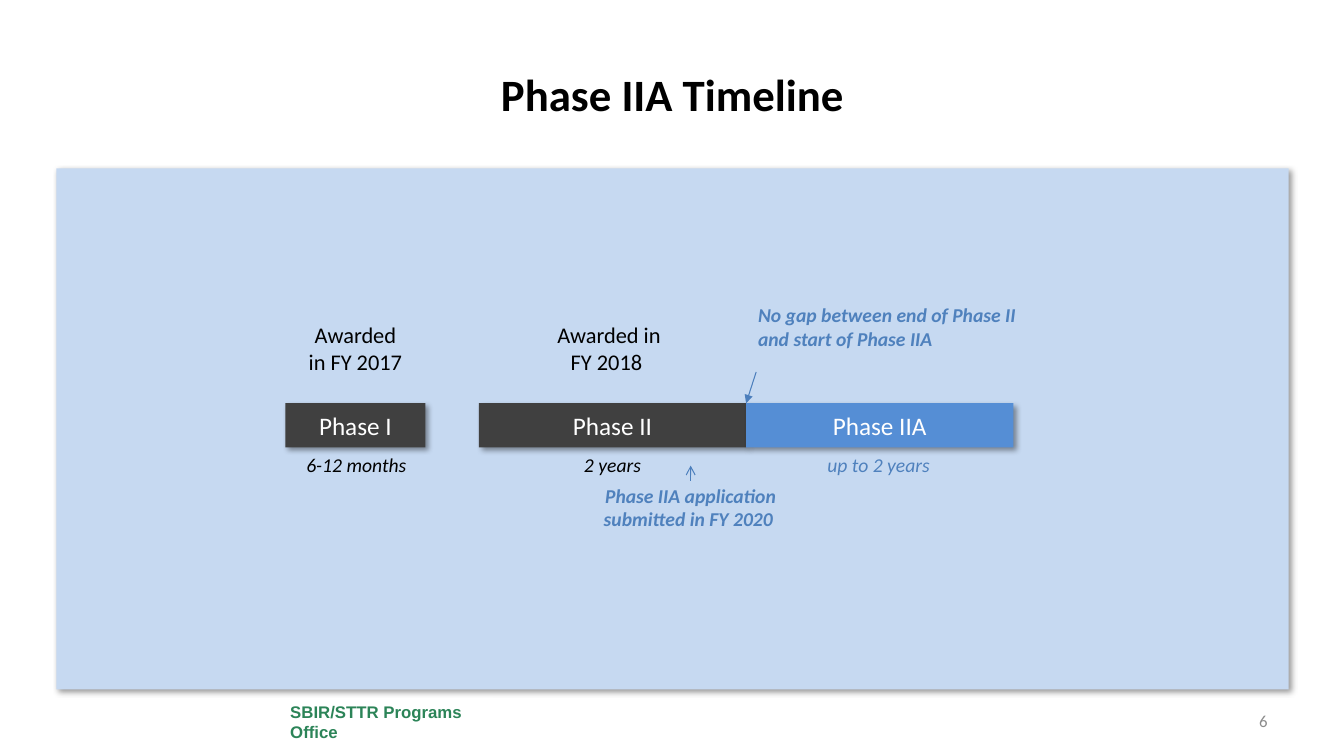
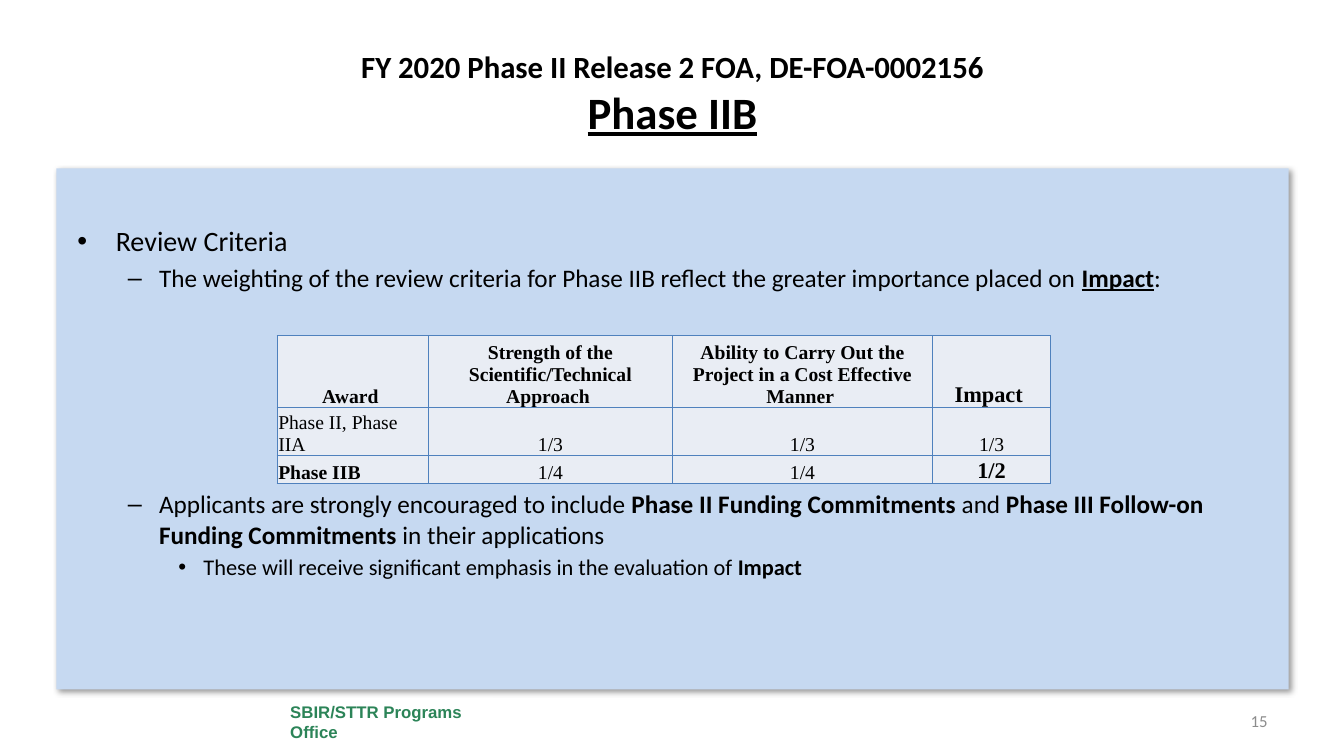
from dataclasses import dataclass
from typing import Optional, Sequence

from lxml import etree
from pptx import Presentation
from pptx.dml.color import RGBColor
from pptx.enum import shapes, text
from pptx.oxml import ns
from pptx.util import Inches, Pt

BLACK = RGBColor(0x00, 0x00, 0x00)
WHITE = RGBColor(0xFF, 0xFF, 0xFF)
PANEL = RGBColor(0xC6, 0xD9, 0xF1)
GREEN = RGBColor(0x2C, 0x84, 0x58)
GRAY = RGBColor(0x8C, 0x8C, 0x8C)
CHARCOAL = RGBColor(0x40, 0x40, 0x40)
BAR_BLUE = RGBColor(0x55, 0x8E, 0xD5)
ACCENT = RGBColor(0x4F, 0x81, 0xBD)
ARROW = RGBColor(0x4B, 0x7E, 0xBC)
CELL = RGBColor(0xE9, 0xED, 0xF4)

LEFT, CENTER, RIGHT = text.PP_ALIGN.LEFT, text.PP_ALIGN.CENTER, text.PP_ALIGN.RIGHT
TOP, MIDDLE, BOTTOM = text.MSO_ANCHOR.TOP, text.MSO_ANCHOR.MIDDLE, text.MSO_ANCHOR.BOTTOM

BAR_TOP, BAR_HEIGHT = 4.0, 0.44


@dataclass(frozen=True)
class Box:
    left: float
    top: float
    width: float
    height: float

    def lengths(self):
        return [Inches(v) for v in (self.left, self.top, self.width, self.height)]


@dataclass(frozen=True)
class Style:
    size: float
    color: RGBColor = BLACK
    bold: bool = False
    italic: bool = False
    align: text.PP_ALIGN = CENTER
    name: str = "Calibri"


@dataclass(frozen=True)
class Run:
    """A piece of text; unset attributes follow its paragraph."""
    words: str
    size: Optional[float] = None
    bold: Optional[bool] = None
    underline: Optional[bool] = None
    starts_line: bool = False


@dataclass(frozen=True)
class Bullet:
    symbol: str
    level: int
    margin: float
    hanging: float
    size: float
    space_before: float
    runs: Sequence[Run]


@dataclass(frozen=True)
class Label:
    words: str
    box: Box
    style: Style


@dataclass(frozen=True)
class Phase:
    name: str
    left: float
    width: float
    fill: RGBColor


@dataclass(frozen=True)
class Arrow:
    start: tuple
    end: tuple
    head: str


TITLE = Style(32, bold=True)
FOOTER = Style(12, GREEN, bold=True, align=LEFT, name="Arial")
NUMBER = Style(12, GRAY, align=RIGHT)
PHASE = Style(18, WHITE)
DURATION = Style(14, italic=True)
DURATION_BLUE = Style(14, ACCENT, italic=True)
AWARDED = Style(16)
NOTE = Style(14, ACCENT, bold=True, italic=True)
NOTE_LEFT = Style(14, ACCENT, bold=True, italic=True, align=LEFT)

PHASES = (
    Phase("Phase I", 2.83, 1.39, CHARCOAL),
    Phase("Phase II", 4.75, 2.65, CHARCOAL),
    Phase("Phase IIA", 7.4, 2.65, BAR_BLUE),
)
LABELS = (
    Label("6-12 months", Box(2.88, 4.44, 1.31, 0.34), DURATION),
    Label("2 years", Box(5.42, 4.44, 1.31, 0.34), DURATION),
    Label("up to 2 years", Box(8.06, 4.44, 1.31, 0.34), DURATION_BLUE),
    Label("Phase IIA application submitted in FY 2020 ", Box(5.74, 4.75, 2.22, 0.57), NOTE),
    Label("Awarded in FY 2017", Box(2.94, 3.14, 1.17, 0.64), AWARDED),
    Label("Awarded in FY 2018 ", Box(5.33, 3.14, 1.42, 0.64), AWARDED),
    Label("No gap between end of Phase II and start of Phase IIA",
          Box(7.42, 2.96, 2.92, 0.57), NOTE_LEFT),
)
ARROWS = (
    Arrow((6.85, 4.77), (6.85, 4.62), "arrow"),
    Arrow((7.5, 3.69), (7.4, BAR_TOP), "triangle"),
)

# The large gap before the third bullet leaves room for the table.
BULLETS = (
    Bullet("•", 0, 0.38, 0.38, 20, 0, [Run("Review Criteria")]),
    Bullet("–", 1, 0.81, 0.31, 18, 3.6, [
        Run("The weighting of the review criteria for Phase IIB reflect the greater "
            "importance placed on "),
        Run("Impact", bold=True, underline=True),
        Run(":")]),
    Bullet("–", 1, 0.81, 0.31, 18, 140, [
        Run("Applicants are strongly encouraged to include "),
        Run("Phase II Funding Commitments ", bold=True),
        Run("and "),
        Run("Phase III Follow-on Funding Commitments ", bold=True),
        Run("in their applications")]),
    Bullet("•", 2, 1.25, 0.25, 16, 3.2, [
        Run("These will receive significant emphasis in the evaluation of "),
        Run("Impact", bold=True)]),
)

CRITERIA = (
    ("Award ", "Strength of the Scientific/Technical Approach ",
     "Ability to Carry Out the Project in a Cost Effective Manner ", "Impact "),
    ("Phase II, Phase IIA", "1/3", "1/3", "1/3"),
    ("Phase IIB", "1/4", "1/4", "1/2"),
)
COLUMN_WIDTHS = (1.5, 2.42, 2.58, 1.17)
ROW_HEIGHTS = (0.65, 0.44, 0.26)
BOLD_CELLS = {(2, 0), (2, 3)}
LARGE_CELLS = {(0, 3), (2, 3)}


def add_element(parent, tag: str, **attributes: str):
    element = etree.SubElement(parent, ns.qn(tag))
    for name, value in attributes.items():
        element.set(name, value)
    return element


def write(paragraph, runs: Sequence[Run], style: Style) -> None:
    paragraph.alignment = style.align
    font = paragraph.font
    font.name, font.size = style.name, Pt(style.size)
    font.bold, font.italic = style.bold, style.italic
    font.color.rgb = style.color
    for part in runs:
        if part.starts_line:
            paragraph.add_line_break()
        run = paragraph.add_run()
        run.text = part.words
        if part.size:
            run.font.size = Pt(part.size)
        if part.bold is not None:
            run.font.bold = part.bold
        if part.underline is not None:
            run.font.underline = part.underline


def add_text(slide, box: Box, runs: Sequence[Run], style: Style, anchor=TOP):
    shape = slide.shapes.add_textbox(*box.lengths())
    frame = shape.text_frame
    frame.word_wrap = True
    frame.vertical_anchor = anchor
    write(frame.paragraphs[0], runs, style)
    return shape


def add_shadowed_rectangle(slide, box: Box, fill: RGBColor):
    shape = slide.shapes.add_shape(shapes.MSO_SHAPE.RECTANGLE, *box.lengths())
    shape.fill.solid()
    shape.fill.fore_color.rgb = fill
    shape.line.fill.background()
    shape.shadow.inherit = False
    effects = shape._element.spPr.find(ns.qn("a:effectLst"))
    shadow = add_element(effects, "a:outerShdw", blurRad=str(Pt(4)), dist=str(Pt(3)),
                         dir="2700000", algn="tl", rotWithShape="0")
    color = add_element(shadow, "a:srgbClr", val=str(BLACK))
    add_element(color, "a:alpha", val="40000")
    return shape


def add_base_slide(presentation, title: Sequence[Run], number: int):
    """Add a slide with the shared panel, footer, title and slide number."""
    slide = presentation.slides.add_slide(presentation.slide_layouts[6])
    add_shadowed_rectangle(slide, Box(0.56, 1.67, 12.22, 5.17), PANEL)
    footer = add_text(slide, Box(2.78, 6.92, 2.11, 0.48),
                      [Run("SBIR/STTR Programs Office")], FOOTER, MIDDLE)
    footer.fill.solid()
    footer.fill.fore_color.rgb = WHITE
    add_text(slide, Box(0.67, 0.3, 12, 1.25), title, TITLE, MIDDLE)
    add_text(slide, Box(10.56, 6.95, 2.11, 0.4), [Run(str(number))], NUMBER, MIDDLE)
    return slide


def add_phase(slide, phase: Phase) -> None:
    bar = add_shadowed_rectangle(
        slide, Box(phase.left, BAR_TOP, phase.width, BAR_HEIGHT), phase.fill)
    bar.text_frame.vertical_anchor = MIDDLE
    write(bar.text_frame.paragraphs[0], [Run(phase.name)], PHASE)


def add_arrow(slide, arrow: Arrow) -> None:
    ends = [Inches(v) for v in (*arrow.start, *arrow.end)]
    connector = slide.shapes.add_connector(shapes.MSO_CONNECTOR.STRAIGHT, *ends)
    connector.line.color.rgb = ARROW
    connector.line.width = Pt(0.75)
    properties = connector._element.spPr
    add_element(properties.find(ns.qn("a:ln")), "a:tailEnd", type=arrow.head)
    add_element(properties, "a:effectLst")


def add_bullets(slide, box: Box, bullets: Sequence[Bullet]) -> None:
    frame = slide.shapes.add_textbox(*box.lengths()).text_frame
    frame.word_wrap = True
    for index, bullet in enumerate(bullets):
        paragraph = frame.add_paragraph() if index else frame.paragraphs[0]
        paragraph.level = bullet.level
        properties = paragraph._p.get_or_add_pPr()
        properties.set("marL", str(Inches(bullet.margin)))
        properties.set("indent", str(-Inches(bullet.hanging)))
        add_element(properties, "a:buFont", typeface="Arial")
        add_element(properties, "a:buChar", char=bullet.symbol)
        if bullet.space_before:
            paragraph.space_before = Pt(bullet.space_before)
        write(paragraph, bullet.runs, Style(bullet.size, align=LEFT))


def add_borders(cell) -> None:
    properties = cell._tc.get_or_add_tcPr()
    for index, side in enumerate(("lnL", "lnR", "lnT", "lnB")):
        line = etree.Element(ns.qn(f"a:{side}"), w=str(Pt(1)))
        fill = add_element(line, "a:solidFill")
        add_element(fill, "a:srgbClr", val=str(ACCENT))
        properties.insert(index, line)


def add_criteria_table(slide, left: float, top: float) -> None:
    box = Box(left, top, sum(COLUMN_WIDTHS), sum(ROW_HEIGHTS))
    table = slide.shapes.add_table(len(CRITERIA), len(COLUMN_WIDTHS), *box.lengths()).table
    for column, width in zip(table.columns, COLUMN_WIDTHS):
        column.width = Inches(width)
    for row, height in zip(table.rows, ROW_HEIGHTS):
        row.height = Inches(height)
    for r, values in enumerate(CRITERIA):
        for c, value in enumerate(values):
            cell = table.cell(r, c)
            cell.fill.solid()
            cell.fill.fore_color.rgb = CELL
            cell.vertical_anchor = BOTTOM
            cell.margin_left = cell.margin_right = cell.margin_top = Inches(0.01)
            cell.margin_bottom = Inches(0)
            style = Style(16 if (r, c) in LARGE_CELLS else 14,
                          bold=r == 0 or (r, c) in BOLD_CELLS,
                          align=LEFT if r and c == 0 else CENTER,
                          name="Times New Roman")
            write(cell.text_frame.paragraphs[0], [Run(value)], style)
            add_borders(cell)


def main() -> None:
    presentation = Presentation()
    presentation.slide_width, presentation.slide_height = Inches(13.33), Inches(7.5)

    timeline = add_base_slide(presentation, [Run("Phase IIA Timeline")], 6)
    for phase in PHASES:
        add_phase(timeline, phase)
    for label in LABELS:
        add_text(timeline, label.box, [Run(label.words)], label.style)
    for arrow in ARROWS:
        add_arrow(timeline, arrow)

    review = add_base_slide(presentation, [
        Run("FY 2020 Phase II Release 2 FOA, DE-FOA-0002156", size=22),
        Run("Phase IIB", underline=True, starts_line=True)], 15)
    add_bullets(review, Box(0.67, 2.17, 12, 4.53), BULLETS)
    add_criteria_table(review, 2.75, 3.33)

    presentation.save("out.pptx")


if __name__ == "__main__":
    main()
